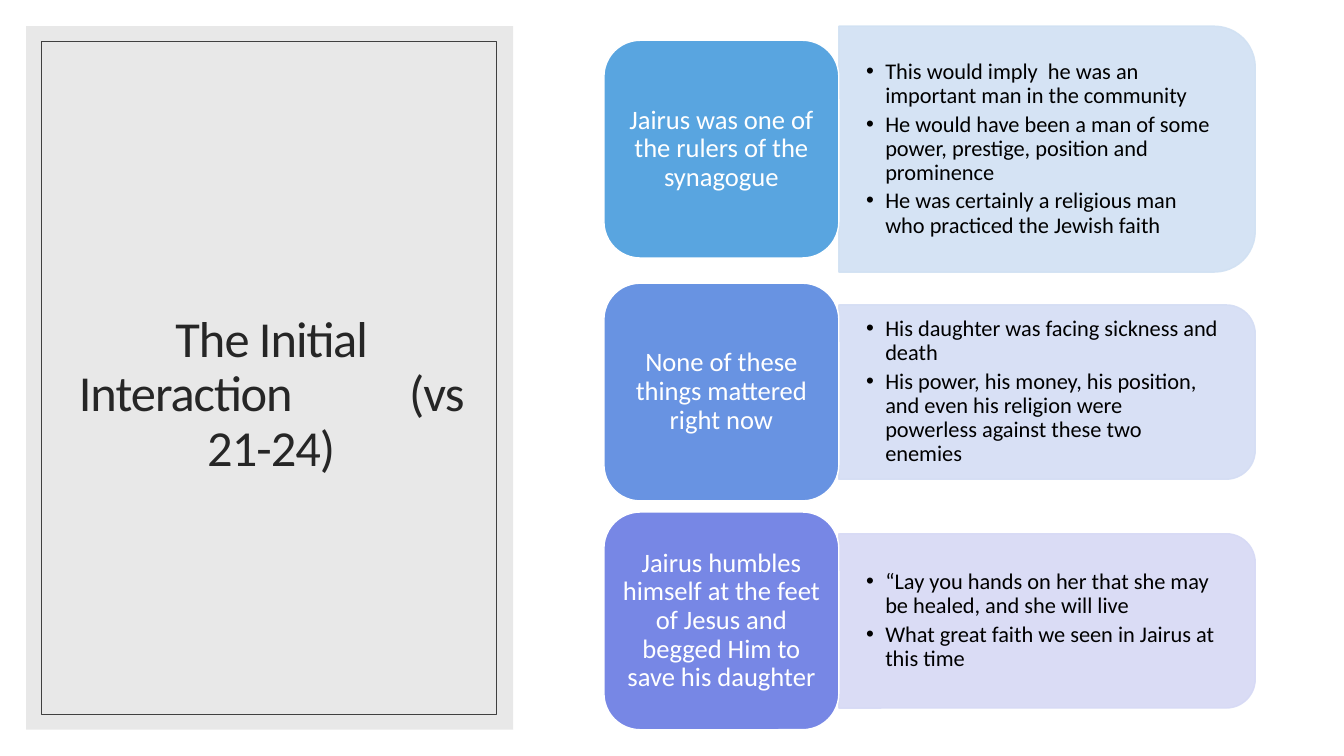
from dataclasses import dataclass

from pptx import Presentation
from pptx.dml.color import RGBColor
from pptx.enum.shapes import MSO_SHAPE as Preset
from pptx.enum.text import MSO_ANCHOR as Anchor, MSO_AUTO_SIZE as AutoSize, PP_ALIGN as Align
from pptx.oxml.ns import qn
from pptx.util import Emu, Pt
from lxml.etree import SubElement

SCALE = 9144  # EMU in one px, at 100 px to the inch


def px(length):
    return Emu(round(length * SCALE))


@dataclass(frozen=True)
class Theme:
    font: str = "Calibri"
    paper: str = "FFFFFF"
    sidebar: str = "D9D9D9"
    frame: str = "404040"
    title: str = "262626"
    body: str = "000000"
    on_tile: str = "FFFFFF"
    tiles: tuple = ("59A5E0", "6893E2", "7787E5")
    panels: tuple = ("D1E1F3", "D4DDF4", "D6D9F5")
    title_size: int = 36
    tile_size: int = 19
    body_size: int = 16


class SlideBuilder:
    def __init__(self, slide, theme):
        self.slide = slide
        self.theme = theme
        slide.background.fill.solid()
        slide.background.fill.fore_color.rgb = RGBColor.from_string(theme.paper)

    def paint(self, fill, color, opacity=100):
        fill.solid()
        fill.fore_color.rgb = RGBColor.from_string(color)
        if opacity < 100:
            for tint in fill._xPr.iter(qn("a:srgbClr")):
                SubElement(tint, qn("a:alpha"), val=str(opacity * 1000))

    def shape(self, preset, box, fill=None, line=None, weight=1, opacity=100):
        shape = self.slide.shapes.add_shape(preset, *map(px, box))
        shape.shadow.inherit = False
        if fill:
            self.paint(shape.fill, fill, opacity)
        else:
            shape.fill.background()
        if line:
            self.paint(shape.line.fill, line, opacity)
            shape.line.width = Pt(weight)
        else:
            shape.line.fill.background()
        return shape

    def frame(self, holder, insets):
        frame = holder.text_frame
        frame.word_wrap = True
        frame.auto_size = AutoSize.NONE
        frame.vertical_anchor = Anchor.MIDDLE
        side, end = map(px, insets)
        frame.margin_left = frame.margin_right = side
        frame.margin_top = frame.margin_bottom = end
        return frame

    def paragraph(self, frame, index, align, after=0):
        paragraph = frame.add_paragraph() if index else frame.paragraphs[0]
        paragraph.alignment = align
        paragraph.line_spacing = 0.9
        paragraph.space_before = Pt(0)
        paragraph.space_after = Pt(after)
        return paragraph

    def run(self, paragraph, text, size, color, tracking=0):
        run = paragraph.add_run()
        run.text = text
        run.font.name = self.theme.font
        run.font.size = Pt(size)
        run.font.bold = False
        run.font.color.rgb = RGBColor.from_string(color)
        if tracking:
            run._r.get_or_add_rPr().set("spc", str(tracking))

    def place(self, holder, box):
        holder.left, holder.top, holder.width, holder.height = map(px, box)
        self.slide.shapes._spTree.append(holder._element)  # bring to front

    def title(self, pieces, box):
        holder = self.slide.shapes.title
        self.place(holder, box)
        heading = self.paragraph(self.frame(holder, (10, 5)), 0, Align.CENTER)
        for text, tracking in pieces:
            self.run(heading, text, self.theme.title_size, self.theme.title, tracking)

    def tile(self, text, box, color):
        tile = self.shape(Preset.ROUNDED_RECTANGLE, box, color, self.theme.paper)
        label = self.paragraph(self.frame(tile, (8, 4)), 0, Align.CENTER)
        self.run(label, text, self.theme.tile_size, self.theme.on_tile)

    def panel(self, box, color):
        # Drawn upright around the same centre, then turned to round the right side
        left, top, width, height = box
        upright = (left + (width - height) / 2, top + (height - width) / 2, height, width)
        panel = self.shape(Preset.ROUND_2_SAME_RECTANGLE, upright, color, color, opacity=90)
        panel.rotation = 90

    def bullets(self, holder, items, box):
        self.place(holder, box)
        frame = self.frame(holder, (27, 14))
        for index, item in enumerate(items):
            point = self.paragraph(frame, index, Align.LEFT, after=3)
            props = point._p.get_or_add_pPr()
            props.set("marL", str(px(19)))
            props.set("indent", str(-px(19)))
            SubElement(props, qn("a:buFont"), typeface="Arial")
            SubElement(props, qn("a:buChar"), char="•")
            self.run(point, item, self.theme.body_size, self.theme.body)


# Title pieces with their letter spacing; the wide space sets the verses apart
TITLE = [("The Initial Interaction", -70), (" ", 7500), ("(vs 21-24)", -70)]

# Tile text, panel height, panel points
ROWS = [
    ("Jairus was one of the rulers of the synagogue", 244, [
        "This would imply  he was an important man in the community",
        "He would have been a man of some power, prestige, position and prominence",
        "He was certainly a religious man who practiced the Jewish faith",
    ]),
    ("None of these things mattered right now", 173, [
        "His daughter was facing sickness and death",
        "His power, his money, his position, and even his religion were powerless "
        "against these two enemies",
    ]),
    ("Jairus humbles himself at the feet of Jesus and begged Him to save his daughter", 173, [
        "“Lay you hands on her that she may be healed, and she will live",
        "What great faith we seen in Jairus at this time",
    ]),
]

TOP, GAP = 26, 11
TILE_LEFT, TILE_WIDTH, TILE_HEIGHT = 599, 233, 216
PANEL_LEFT, PANEL_WIDTH = TILE_LEFT + TILE_WIDTH, 413
CORNER_INSET = 0.05  # share of the panel height kept clear by its round corners


def main():
    deck = Presentation()
    deck.slide_width, deck.slide_height = px(1333), px(750)
    theme = Theme()
    slide = deck.slides.add_slide(deck.slide_layouts.get_by_name("Comparison"))
    builder = SlideBuilder(slide, theme)
    _, *lists, spare = slide.placeholders
    spare._element.getparent().remove(spare._element)

    # Sidebar with the title
    builder.shape(Preset.RECTANGLE, (26, 26, 483, 698), theme.sidebar, opacity=60)
    builder.title(TITLE, (63, 61, 412, 663))
    builder.shape(Preset.RECTANGLE, (41, 41, 451, 668), line=theme.frame, weight=0.5)

    # Rows: tile and panel centred on each other
    top = TOP
    for (label, height, points), holder, tile_color, panel_color in zip(
            ROWS, lists, theme.tiles, theme.panels):
        row_height = max(height, TILE_HEIGHT)
        panel_top = top + (row_height - height) / 2
        inset = height * CORNER_INSET
        builder.panel((PANEL_LEFT, panel_top, PANEL_WIDTH, height), panel_color)
        builder.bullets(holder, points, (
            PANEL_LEFT, panel_top + inset, PANEL_WIDTH - inset, height - 2 * inset))
        builder.tile(label, (
            TILE_LEFT, top + (row_height - TILE_HEIGHT) / 2, TILE_WIDTH, TILE_HEIGHT), tile_color)
        top += row_height + GAP

    deck.save("out.pptx")


if __name__ == "__main__":
    main()
